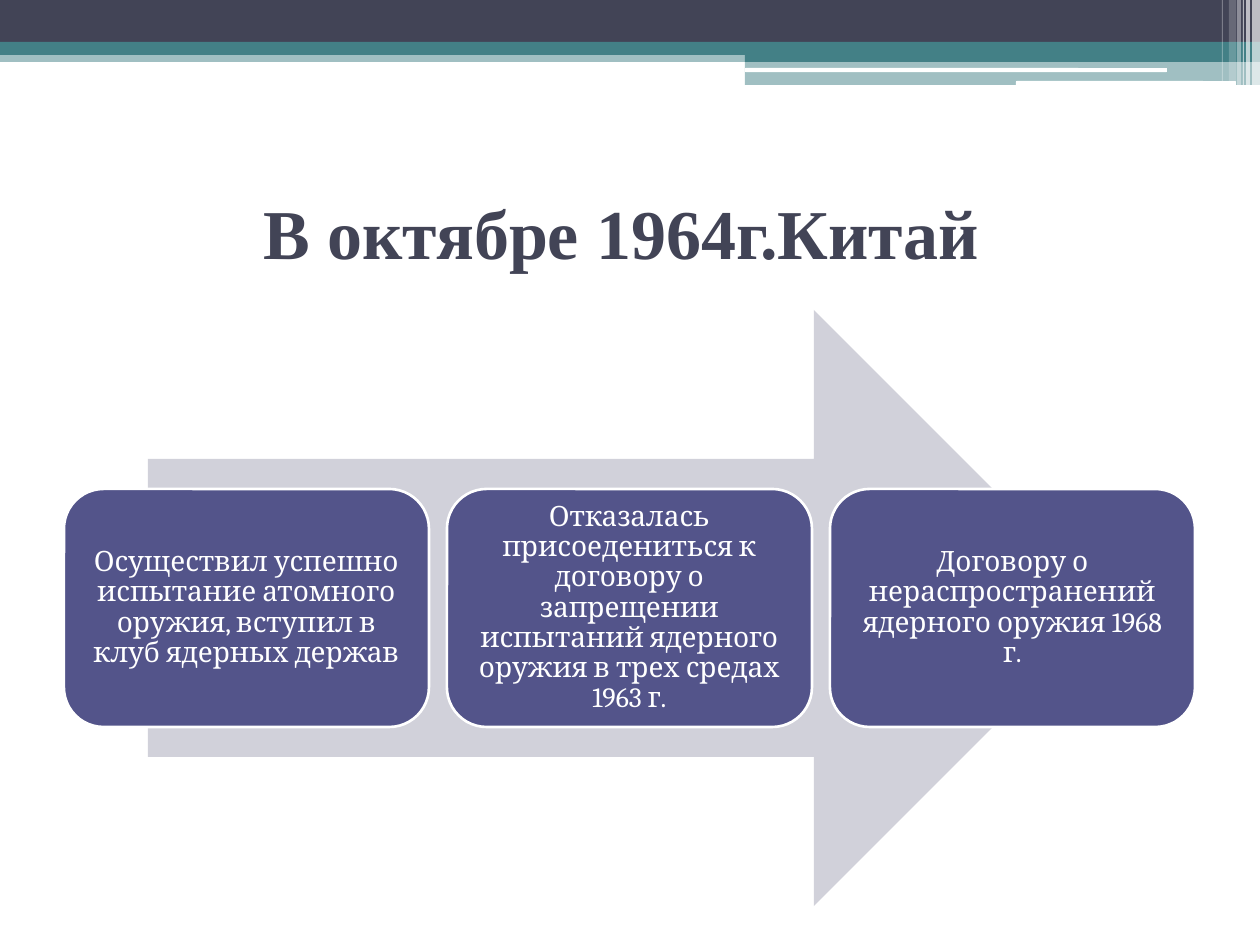
import pptx
import pptx.util
import pptx.oxml
import pptx.dml.color
import pptx.enum.shapes
import pptx.enum.text

EMU_PER_PX = 914400 / 126
COLORS = {
    "navy": "424456",
    "teal": "438086",
    "white": "FFFFFF",
    "arrow": "D1D1DA",
    "card": "53548A",
}
SHAPES = pptx.enum.shapes.MSO_SHAPE
CENTER = pptx.enum.text.PP_ALIGN.CENTER
MIDDLE = pptx.enum.text.MSO_ANCHOR.MIDDLE


def px(*lengths):
    return [pptx.util.Emu(round(length * EMU_PER_PX)) for length in lengths]


def add_filled_shape(kind, box, color, opacity=100):
    """Add a borderless shape; box is left, top, width, height in px."""
    shape = slide.shapes.add_shape(kind, *px(*box))
    shape.shadow.inherit = False
    shape.line.fill.background()
    shape.fill.solid()
    shape.fill.fore_color.rgb = pptx.dml.color.RGBColor.from_string(COLORS[color])
    if opacity < 100:
        color_element = shape.fill._xPr.find(".//" + pptx.oxml.ns.qn("a:srgbClr"))
        alpha = pptx.oxml.parse_xml(
            f'<a:alpha {pptx.oxml.ns.nsdecls("a")} val="{opacity * 1000}"/>')
        color_element.append(alpha)
    return shape


presentation = pptx.Presentation()
presentation.slide_width, presentation.slide_height = px(1260, 945)
slide = presentation.slides.add_slide(presentation.slide_layouts[5])

# Header bands
bands = [
    ((0, 50, 1260, 12), "teal", 50),
    ((0, 0, 1260, 42), "navy", 100),
    ((0, 42, 1260, 13), "teal", 100),
    ((745, 49, 515, 13), "teal", 100),
    ((745, 62, 515, 23), "teal", 50),
]
for box, color, opacity in bands:
    add_filled_shape(SHAPES.RECTANGLE, box, color, opacity)

for box in [(745, 68, 422, 4), (1016, 81, 220, 5)]:
    add_filled_shape(SHAPES.ROUNDED_RECTANGLE, box, "white")

# Vertical stripes at the right end: left, width, height, opacity
stripes = [
    (1252, 8, 85, 65),
    (1246, 4, 85, 65),
    (1243, 1, 85, 60),
    (1237, 4, 85, 40),
    (1229, 7, 81, 20),
    (1222, 1, 81, 30),
]
for left, width, height, opacity in stripes:
    add_filled_shape(SHAPES.RECTANGLE, (left, 0, width, height), "white", opacity)

# Title
title = slide.shapes.title
title.left, title.top, title.width, title.height = px(63, 158, 1134, 147)
title.text_frame.text = "В октябре 1964г.Китай "
title.text_frame.vertical_anchor = MIDDLE
title_paragraph = title.text_frame.paragraphs[0]
title_paragraph.alignment = CENTER
title_font = title_paragraph.runs[0].font
title_font.name = "Times New Roman"
title_font.size = pptx.util.Pt(40)
title_font.bold = True
title_font.color.rgb = pptx.dml.color.RGBColor.from_string(COLORS["navy"])

# Process arrow with three cards
add_filled_shape(SHAPES.RIGHT_ARROW, (148, 310, 964, 596), "arrow")

card_texts = [
    "Осуществил успешно испытание атомного оружия, вступил в клуб ядерных держав",
    "Отказалась присоедениться к договору о запрещении испытаний ядерного "
    "оружия в трех средах 1963 г.",
    "Договору о нераспространений ядерного оружия 1968 г.",
]
card_left, card_step = 64, 383
white = pptx.dml.color.RGBColor.from_string(COLORS["white"])
for index, text in enumerate(card_texts):
    box = (card_left + index * card_step, 489, 365, 238)
    card = add_filled_shape(SHAPES.ROUNDED_RECTANGLE, box, "card")
    card.line.color.rgb = white
    card.line.width = pptx.util.Pt(1.5)
    frame = card.text_frame
    frame.text = text
    frame.word_wrap = True
    frame.vertical_anchor = MIDDLE
    frame.margin_left, frame.margin_top, frame.margin_right, frame.margin_bottom = px(9, 9, 9, 9)
    paragraph = frame.paragraphs[0]
    paragraph.alignment = CENTER
    paragraph.line_spacing = 0.9
    font = paragraph.runs[0].font
    font.name = "Cambria"
    font.size = pptx.util.Pt(16)
    font.color.rgb = white

presentation.save("out.pptx")
